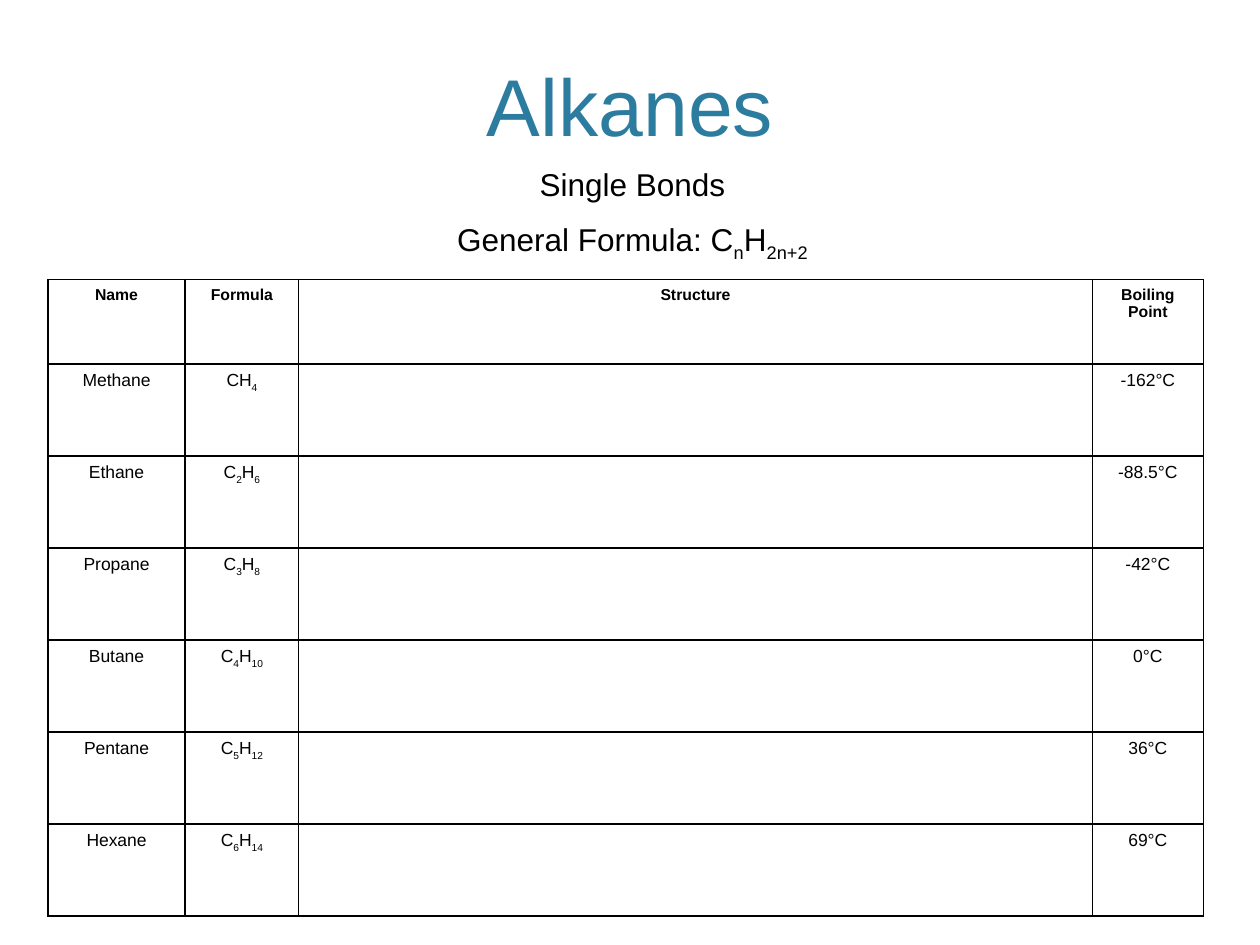
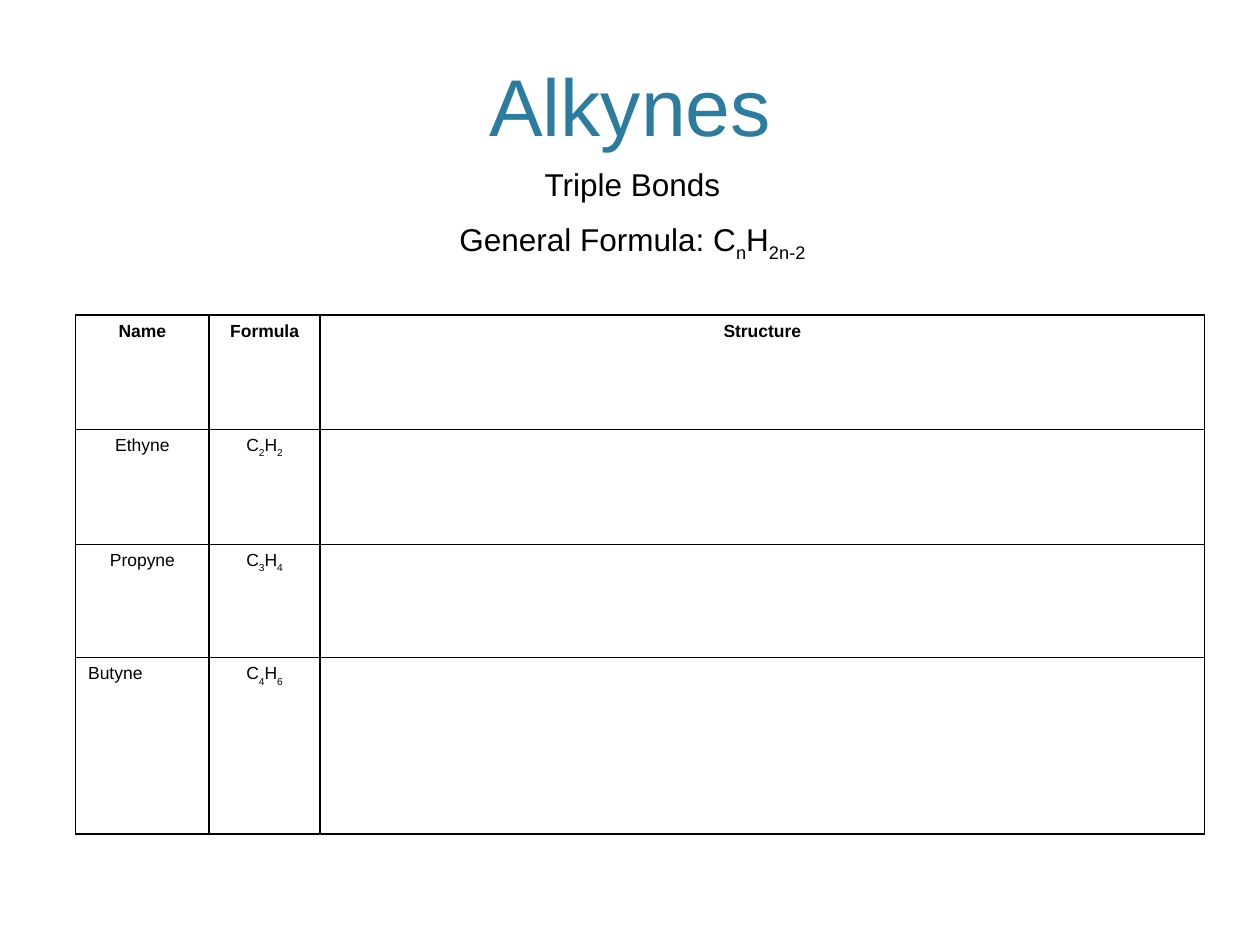
from lxml.etree import SubElement
from pptx import Presentation
from pptx.dml.color import RGBColor
from pptx.enum.text import MSO_ANCHOR, MSO_AUTO_SIZE, PP_ALIGN
from pptx.oxml.ns import qn
from pptx.util import Inches, Pt

# Text between underscores is set as subscript.
FAMILIES = [
    {
        "title": "Alkanes",
        "summary": ["Single Bonds", "General Formula: C_n_H_2n+2_"],
        "header": ["Name", "Formula", "Structure", "Boiling Point"],
        "compounds": [
            ("Methane", "CH_4_", "", "-162°C"),
            ("Ethane", "C_2_H_6_", "", "-88.5°C"),
            ("Propane", "C_3_H_8_", "", "-42°C"),
            ("Butane", "C_4_H_10_", "", "0°C"),
            ("Pentane", "C_5_H_12_", "", "36°C"),
            ("Hexane", "C_6_H_14_", "", "69°C"),
        ],
        "corner": (0.38, 2.22),
        "columns": [1.09, 0.9, 6.3, 0.88],
        "rows": [0.67] + [0.73] * 6,
        "header_size": 9,
        "left_aligned": [],
    },
    {
        "title": "Alkynes",
        "summary": ["Triple Bonds", "General Formula: C_n_H_2n-2_"],
        "header": ["Name", "Formula", "Structure"],
        "compounds": [
            ("Ethyne", "C_2_H_2_", ""),
            ("Propyne", "C_3_H_4_", ""),
            ("Butyne", "C_4_H_6_", ""),
        ],
        "corner": (0.6, 2.5),
        "columns": [1.06, 0.88, 7.02],
        "rows": [0.91, 0.91, 0.9, 1.4],
        "header_size": 10,
        "left_aligned": ["Butyne"],
    },
]

COLORS = {"title": "2C7C9F", "text": "000000", "border": "000000"}
FONT = "Arial"
TITLE_BOX = (0.6, 0.12, 8.8, 1.14)
SUMMARY_BOX = (2.87, 1.26, 4.3, 0.85)
TITLE_ONLY = 5


def write(paragraph, text, size, color="text", bold=False,
          align=PP_ALIGN.CENTER, drop=-30, before=0):
    """Fill a paragraph, lowering the underscored parts by drop percent."""
    paragraph.alignment = align
    paragraph.space_before = Pt(before)
    for index, part in enumerate(text.split("_")):
        if not part:
            continue
        run = paragraph.add_run()
        run.text = part
        run.font.name = FONT
        run.font.size = Pt(size)
        run.font.bold = bold
        run.font.color.rgb = RGBColor.from_string(COLORS[color])
        if index % 2:
            run.font._element.set("baseline", str(drop * 1000))


def add_title(slide, text):
    title = slide.shapes.title
    title.left, title.top, title.width, title.height = map(Inches, TITLE_BOX)
    title.text_frame.vertical_anchor = MSO_ANCHOR.BOTTOM
    write(title.text_frame.paragraphs[0], text, 46, color="title")


def add_summary(slide, lines):
    frame = slide.shapes.add_textbox(*map(Inches, SUMMARY_BOX)).text_frame
    frame.word_wrap = True
    frame.auto_size = MSO_AUTO_SIZE.SHAPE_TO_FIT_TEXT
    bonds, formula = lines
    write(frame.paragraphs[0], bonds, 18, drop=-25)
    write(frame.add_paragraph(), formula, 18, drop=-25, before=10)


def outline(cell):
    properties = cell._tc.get_or_add_tcPr()
    for side in ("lnL", "lnR", "lnT", "lnB"):
        line = SubElement(properties, qn(f"a:{side}"), w=str(Pt(1)))
        fill = SubElement(line, qn("a:solidFill"))
        SubElement(fill, qn("a:srgbClr"), val=COLORS["border"])


def add_compound_table(slide, family):
    columns, rows = family["columns"], family["rows"]
    table = slide.shapes.add_table(
        len(rows), len(columns), *map(Inches, family["corner"]),
        Inches(sum(columns)), Inches(sum(rows))).table
    table.first_row = table.horz_banding = False
    for column, width in zip(table.columns, columns):
        column.width = Inches(width)
    for row, height in zip(table.rows, rows):
        row.height = Inches(height)
    for r, entries in enumerate([family["header"], *family["compounds"]]):
        is_header = r == 0
        for c, entry in enumerate(entries):
            cell = table.cell(r, c)
            outline(cell)
            cell.fill.background()
            left = entry in family["left_aligned"]
            write(cell.text_frame.paragraphs[0], entry,
                  family["header_size"] if is_header else 10, bold=is_header,
                  align=PP_ALIGN.LEFT if left else PP_ALIGN.CENTER)


def main():
    deck = Presentation()
    deck.slide_width, deck.slide_height = Inches(10), Inches(7.5)
    for family in FAMILIES:
        slide = deck.slides.add_slide(deck.slide_layouts[TITLE_ONLY])
        add_title(slide, family["title"])
        add_summary(slide, family["summary"])
        add_compound_table(slide, family)
    deck.save("out.pptx")


if __name__ == "__main__":
    main()
